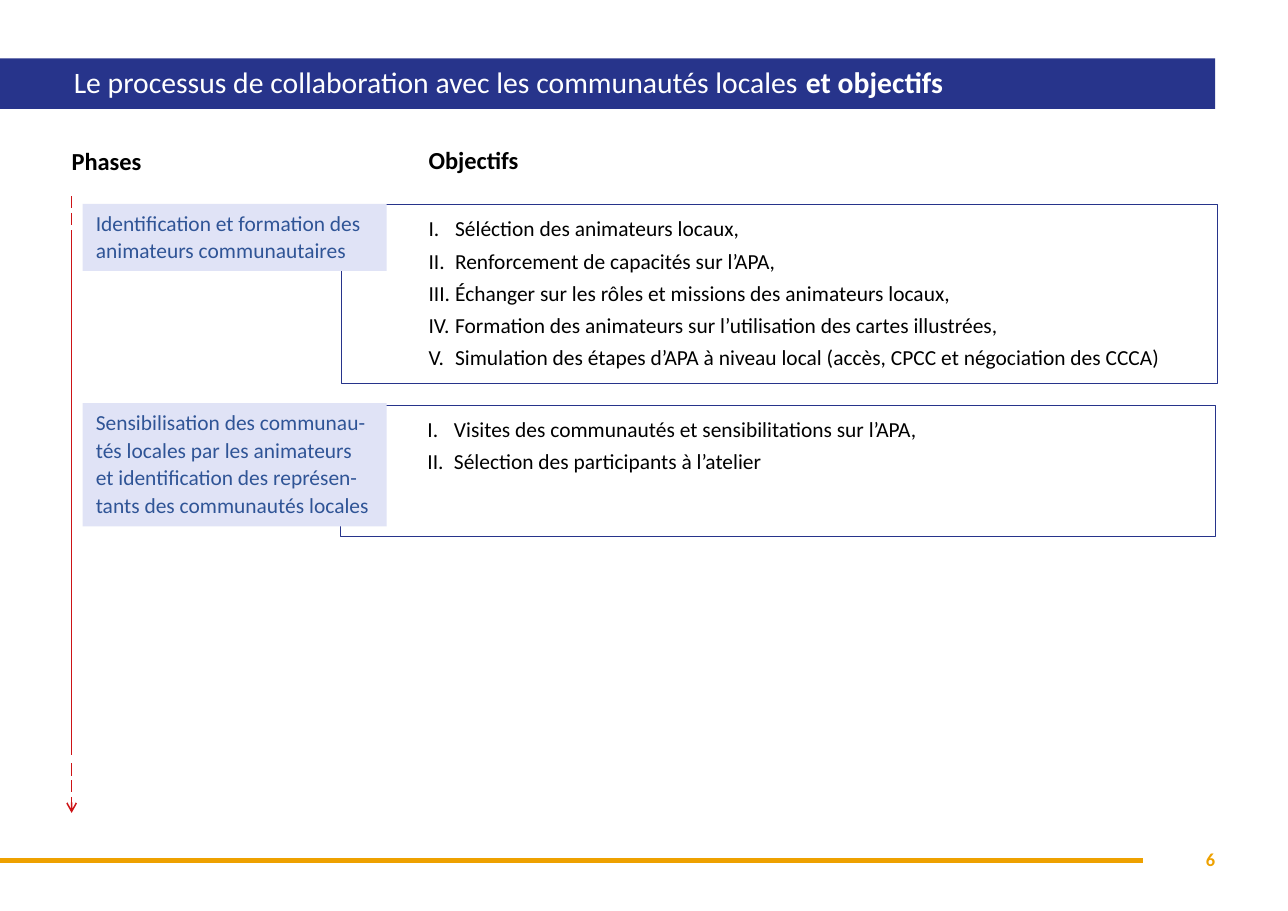
from lxml import etree
from pptx import Presentation
from pptx.dml.color import RGBColor
from pptx.enum.dml import MSO_LINE
from pptx.enum.shapes import MSO_CONNECTOR, MSO_SHAPE
from pptx.enum.text import MSO_ANCHOR, PP_ALIGN
from pptx.oxml.ns import qn
from pptx.util import Inches, Pt

RECT = MSO_SHAPE.RECTANGLE
STRAIGHT = MSO_CONNECTOR.STRAIGHT
LONG_DASH = MSO_LINE.LONG_DASH
TOP, MIDDLE = MSO_ANCHOR.TOP, MSO_ANCHOR.MIDDLE
LEFT, RIGHT = PP_ALIGN.LEFT, PP_ALIGN.RIGHT

FONT = "Calibri"
NAVY, GOLD, RED = "27348B", "EEA100", "CD1316"
LAVENDER, BLUE = "E0E3F6", "2F5496"
WHITE, BLACK = "FFFFFF", "000000"

HEADING = {"line_spacing": 0.9}
PHASE = {"line_spacing": Pt(18)}
OBJECTIVE = {"line_spacing": Pt(18), "space_after": Pt(3)}
NO_INSETS = (0, 0, 0, 0)
PHASE_INSETS = (0.12, 0.04, 0.12, 0.08)
OBJECTIVE_INSETS = (0.79, 0.08, 0.08, 0.12)

ROWS = [
    ("Sensibilisation des communau-tés locales par les animateurs "
     "et identification des représen-tants des communautés locales",
     (0.75, 3.66, 2.76, 1.12),
     ["Visites des communautés et sensibilitations sur l’APA,",
      "Sélection des participants à l’atelier"],
     (3.09, 3.68, 7.94, 1.19)),
    ("Identification et formation des animateurs communautaires",
     (0.75, 1.85, 2.76, 0.61),
     ["Séléction des animateurs locaux,",
      "Renforcement de capacités sur l’APA,",
      "Échanger sur les rôles et missions des animateurs locaux,",
      "Formation des animateurs sur l’utilisation des cartes illustrées,",
      "Simulation des étapes d’APA à niveau local (accès, CPCC et négociation des CCCA)"],
     (3.1, 1.86, 7.95, 1.62)),
]


def rgb(value):
    return RGBColor.from_string(value)


def apply(target, formats):
    for name, value in formats.items():
        setattr(target, name, value)


def set_frame(sp, insets, anchor=TOP):
    tf = sp.text_frame
    left, top, right, bottom = map(Inches, insets)
    apply(tf, {"word_wrap": True, "vertical_anchor": anchor,
               "margin_left": left, "margin_top": top,
               "margin_right": right, "margin_bottom": bottom})
    return tf


def add_run(p, text, size, color, bold=False):
    r = p.add_run()
    r.text = text
    apply(r.font, {"name": FONT, "size": Pt(size), "bold": bold})
    r.font.color.rgb = rgb(color)


def set_numbering(p):
    pPr = p._p.get_or_add_pPr()
    pPr.set("marL", str(Inches(0.24)))
    pPr.set("indent", str(-Inches(0.24)))
    etree.SubElement(pPr, qn("a:buFont"), typeface=FONT)
    etree.SubElement(pPr, qn("a:buAutoNum"), type="romanUcPeriod")


def add_box(s, box, fill, line=None):
    sp = s.shapes.add_shape(RECT, *map(Inches, box))
    sp.shadow.inherit = False
    sp.fill.solid()
    sp.fill.fore_color.rgb = rgb(fill)
    if line:
        sp.line.color.rgb = rgb(line)
        sp.line.width = Pt(0.75)
    else:
        sp.line.fill.background()
    return sp


def add_label(s, box, text, size, color, formats):
    sp = s.shapes.add_textbox(*map(Inches, box))
    p = set_frame(sp, NO_INSETS).paragraphs[0]
    apply(p, formats)
    add_run(p, text, size, color, True)


def add_title(s):
    sp = add_box(s, (0, 0.53, 11.03, 0.46), NAVY)
    p = set_frame(sp, (0.67, 0.04, 0.39, 0.04), MIDDLE).paragraphs[0]
    apply(p, {"alignment": LEFT, **HEADING})
    add_run(p, "Le processus de collaboration avec les communautés locales ", 19.4, WHITE)
    add_run(p, "et objectifs", 19.4, WHITE, True)


def add_phase(s, box, text):
    sp = add_box(s, box, LAVENDER)
    p = set_frame(sp, PHASE_INSETS).paragraphs[0]
    apply(p, {"alignment": LEFT, **PHASE})
    add_run(p, text, 14, BLUE)


def add_objectives(s, box, items):
    sp = add_box(s, box, WHITE, NAVY)
    tf = set_frame(sp, OBJECTIVE_INSETS)
    for i, item in enumerate(items):
        p = tf.add_paragraph() if i else tf.paragraphs[0]
        apply(p, {"alignment": LEFT, **OBJECTIVE})
        set_numbering(p)
        add_run(p, item, 14, BLACK)


def add_line(s, ends, color, width, dash=None, arrow=False):
    line = s.shapes.add_connector(STRAIGHT, *map(Inches, ends))
    line.line.color.rgb = rgb(color)
    line.line.width = Pt(width)
    if dash:
        line.line.dash_style = dash
    if arrow:
        etree.SubElement(line.line._get_or_add_ln(), qn("a:tailEnd"), type="arrow")
    etree.SubElement(line._element.spPr, qn("a:effectLst"))


def add_timeline(s, x):
    add_line(s, (x, 6.93, x, 7.38), RED, 1, LONG_DASH, True)
    add_line(s, (x, 2.09, x, 6.85), RED, 1)
    add_line(s, (x, 1.78, x, 2.05), RED, 1, LONG_DASH)


def main():
    prs = Presentation()
    prs.slide_width, prs.slide_height = Inches(11.69), Inches(8.27)
    s = prs.slides.add_slide(prs.slide_layouts[6])
    add_label(s, (10.29, 7.7, 0.74, 0.2), "6", 12, GOLD, {"alignment": RIGHT})
    add_line(s, (0, 7.81, 10.37, 7.81), GOLD, 3)
    add_title(s)
    add_label(s, (0.65, 1.36, 5.2, 0.24), "Phases", 16, BLACK, HEADING)
    add_label(s, (3.89, 1.35, 3.78, 0.32), "Objectifs", 16, BLACK, HEADING)
    for phase, phase_box, objectives, objectives_box in ROWS:
        add_objectives(s, objectives_box, objectives)
        add_phase(s, phase_box, phase)
    add_timeline(s, 0.65)
    prs.save("out.pptx")


if __name__ == "__main__":
    main()
